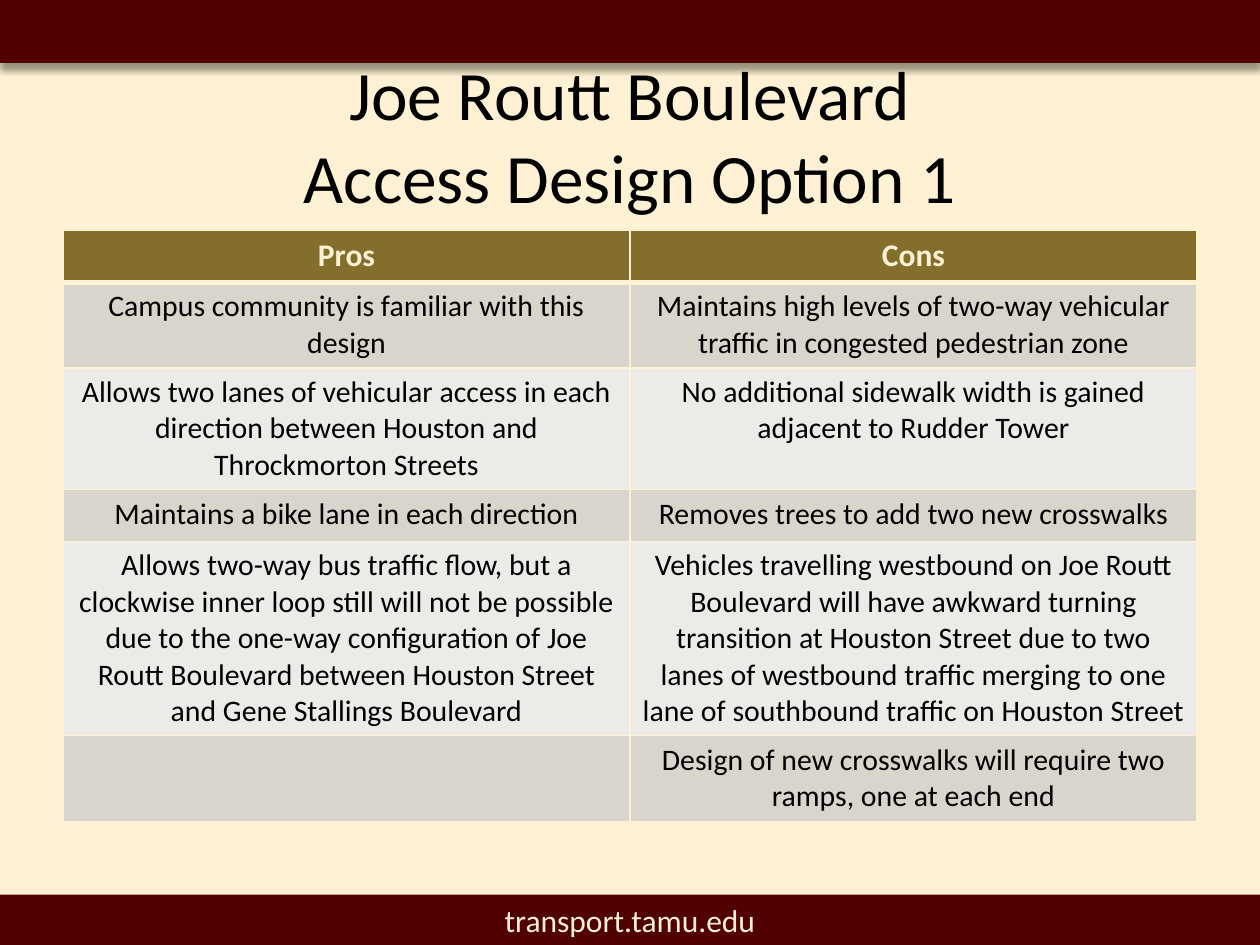
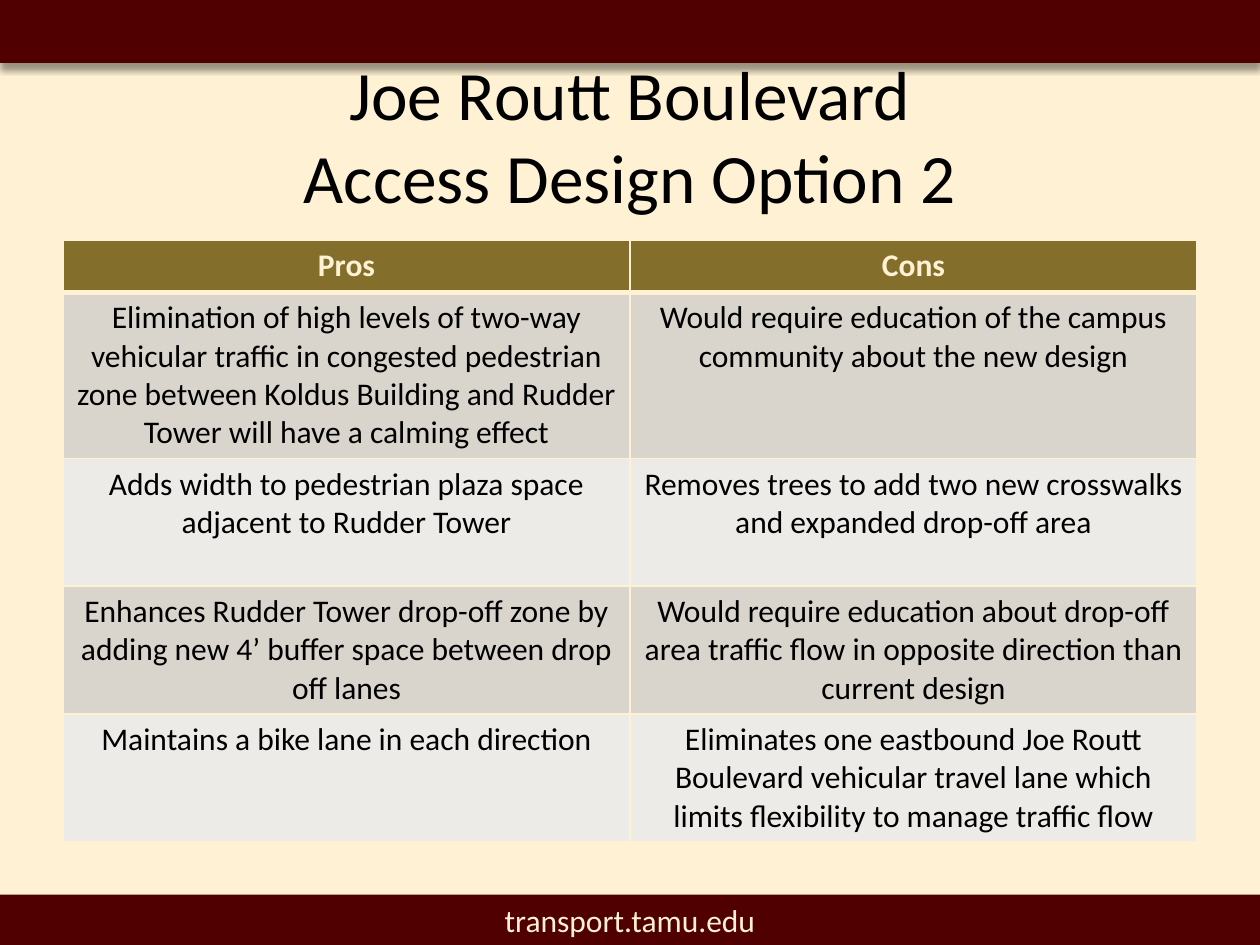
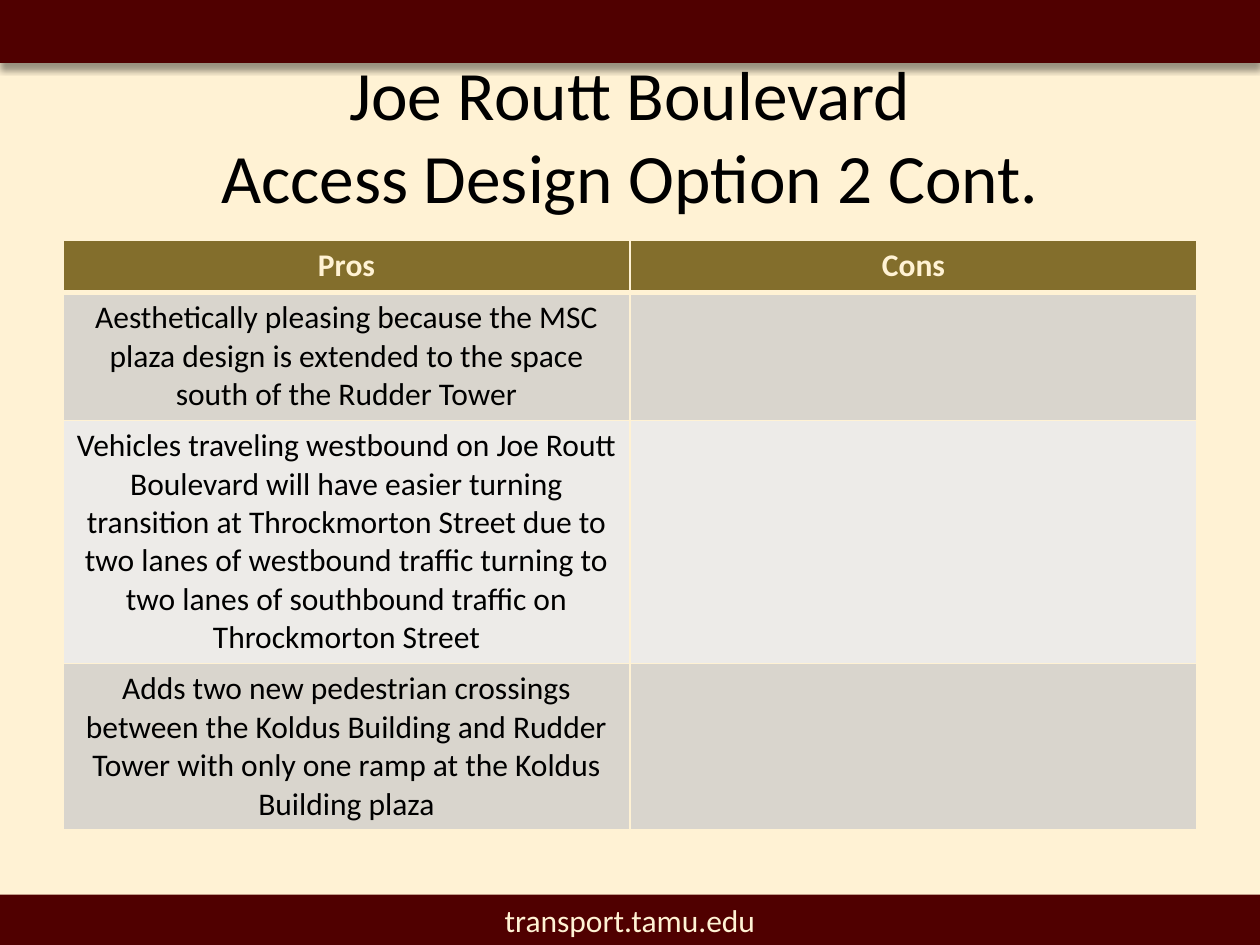
from lxml import etree
from pptx import Presentation
from pptx.dml.color import RGBColor
from pptx.enum import shapes, text
from pptx.oxml import ns
from pptx.util import Inches, Pt

MAROON = RGBColor(0x50, 0x00, 0x00)
CREAM = RGBColor(0xFF, 0xF2, 0xD4)
OLIVE = RGBColor(0x83, 0x6E, 0x2C)
STONE = RGBColor(0xD9, 0xD5, 0xCD)
PALE = RGBColor(0xED, 0xEB, 0xE8)
BLACK = RGBColor(0x00, 0x00, 0x00)

FONT = "Calibri"
WIDE, HIGH = 10, 7.5
EDGE = 0.5
SPAN = WIDE - 2 * EDGE
ROW = 0.41
PAD = 0.1
LEAD = 1.22 / 72

OPTIONS = [
    ("Option 1", 1.83, 17, [
        (2, "Campus community is familiar with this design",
         "Maintains high levels of two-way vehicular traffic in congested pedestrian zone"),
        (3, "Allows two lanes of vehicular access in each direction between Houston and "
            "Throckmorton Streets",
         "No additional sidewalk width is gained adjacent to Rudder Tower"),
        (1, "Maintains a bike lane in each direction",
         "Removes trees to add two new crosswalks"),
        (5, "Allows two-way bus traffic flow, but a clockwise inner loop still will not be "
            "possible due to the one-way configuration of Joe Routt Boulevard between "
            "Houston Street and Gene Stallings Boulevard",
         "Vehicles travelling westbound on Joe Routt Boulevard will have awkward turning "
         "transition at Houston Street due to two lanes of westbound traffic merging to one "
         "lane of southbound traffic on Houston Street"),
        (2, "", "Design of new crosswalks will require two ramps, one at each end"),
    ]),
    ("Option 2", 1.91, 18, [
        (4, "Elimination of high levels of two-way vehicular traffic in congested pedestrian "
            "zone between Koldus Building and Rudder Tower will have a calming effect",
         "Would require education of the campus community about the new design"),
        (3, "Adds width to pedestrian plaza space adjacent to Rudder Tower",
         "Removes trees to add two new crosswalks and expanded drop-off area"),
        (3, "Enhances Rudder Tower drop-off zone by adding new 4’ buffer space between drop "
            "off lanes",
         "Would require education about drop-off area traffic flow in opposite direction "
         "than current design"),
        (3, "Maintains a bike lane in each direction",
         "Eliminates one eastbound Joe Routt Boulevard vehicular travel lane which limits "
         "flexibility to manage traffic flow"),
    ]),
    ("Option 2 Cont.", 1.91, 18, [
        (3, "Aesthetically pleasing because the MSC plaza design is extended to the space "
            "south of the Rudder Tower", ""),
        (6, "Vehicles traveling westbound on Joe Routt Boulevard will have easier turning "
            "transition at Throckmorton Street due to two lanes of westbound traffic turning "
            "to two lanes of southbound traffic on Throckmorton Street", ""),
        (4, "Adds two new pedestrian crossings between the Koldus Building and Rudder Tower "
            "with only one ramp at the Koldus Building plaza", ""),
    ]),
]


def style(frame, size, color, bold=False):
    for para in frame.paragraphs:
        para.alignment = text.PP_ALIGN.CENTER
        for run in para.runs:
            font = run.font
            font.name, font.size, font.bold = FONT, Pt(size), bold
            font.color.rgb = color


def add_band(slide, top, height):
    band = slide.shapes.add_shape(shapes.MSO_SHAPE.RECTANGLE, 0, Inches(top),
                                  Inches(WIDE), Inches(height))
    band.shadow.inherit = False
    band.fill.solid()
    band.fill.fore_color.rgb = MAROON
    band.line.fill.background()
    return band


def add_shadow(shape):
    effects = shape.element.spPr.find(ns.qn("a:effectLst"))
    outer = etree.SubElement(effects, ns.qn("a:outerShdw"), blurRad=str(Pt(4)),
                             dist=str(Pt(3)), dir="5400000", algn="t", rotWithShape="0")
    color = etree.SubElement(outer, ns.qn("a:srgbClr"), val=str(BLACK))
    etree.SubElement(color, ns.qn("a:alpha"), val="40000")


def add_frame(slide):
    add_shadow(add_band(slide, 0, 0.5))
    foot = add_band(slide, 7.1, 0.4).text_frame
    foot.text = "transport.tamu.edu"
    foot.vertical_anchor = text.MSO_ANCHOR.MIDDLE
    style(foot, 18, CREAM)


def set_title(slide, name):
    title = slide.shapes.title
    title.left, title.top = Inches(EDGE), Inches(0.58)
    title.width, title.height = Inches(SPAN), Inches(0.97)
    frame = title.text_frame
    frame.text = f"Joe Routt Boulevard\vAccess Design {name}"
    frame.auto_size = text.MSO_AUTO_SIZE.NONE
    frame.vertical_anchor = text.MSO_ANCHOR.MIDDLE
    style(frame, 39.6, BLACK)


def set_edges(cell, row):
    props = cell._tc.get_or_add_tcPr()
    widths = {"L": 1, "R": 1, "T": 3 if row == 1 else 1, "B": 3 if row == 0 else 1}
    for side, width in widths.items():
        line = etree.SubElement(props, ns.qn(f"a:ln{side}"), w=str(Pt(width)))
        fill = etree.SubElement(line, ns.qn("a:solidFill"))
        etree.SubElement(fill, ns.qn("a:srgbClr"), val=str(CREAM))


def fill_cell(cell, row, words, size):
    head = row == 0
    set_edges(cell, row)
    cell.fill.solid()
    cell.fill.fore_color.rgb = OLIVE if head else STONE if row % 2 else PALE
    if words:
        cell.text_frame.text = words
        style(cell.text_frame, 18 if head else size, CREAM if head else BLACK, head)


def add_grid(slide, top, size, points):
    rows = [(1, "Pros", "Cons")] + points
    tall = [max(ROW, round(PAD + lines * size * LEAD, 2)) for lines, *_ in rows]
    grid = slide.shapes.add_table(len(rows), 2, Inches(EDGE), Inches(top),
                                  Inches(SPAN), Inches(sum(tall))).table
    for row, (_, *words) in enumerate(rows):
        grid.rows[row].height = Inches(tall[row])
        for col, word in enumerate(words):
            fill_cell(grid.cell(row, col), row, word, size)


def main():
    deck = Presentation()
    deck.slide_width, deck.slide_height = Inches(WIDE), Inches(HIGH)
    back = deck.slide_master.background.fill
    back.solid()
    back.fore_color.rgb = CREAM
    for name, top, size, points in OPTIONS:
        slide = deck.slides.add_slide(deck.slide_layouts[5])
        add_frame(slide)
        set_title(slide, name)
        add_grid(slide, top, size, points)
    deck.save("out.pptx")


if __name__ == "__main__":
    main()
